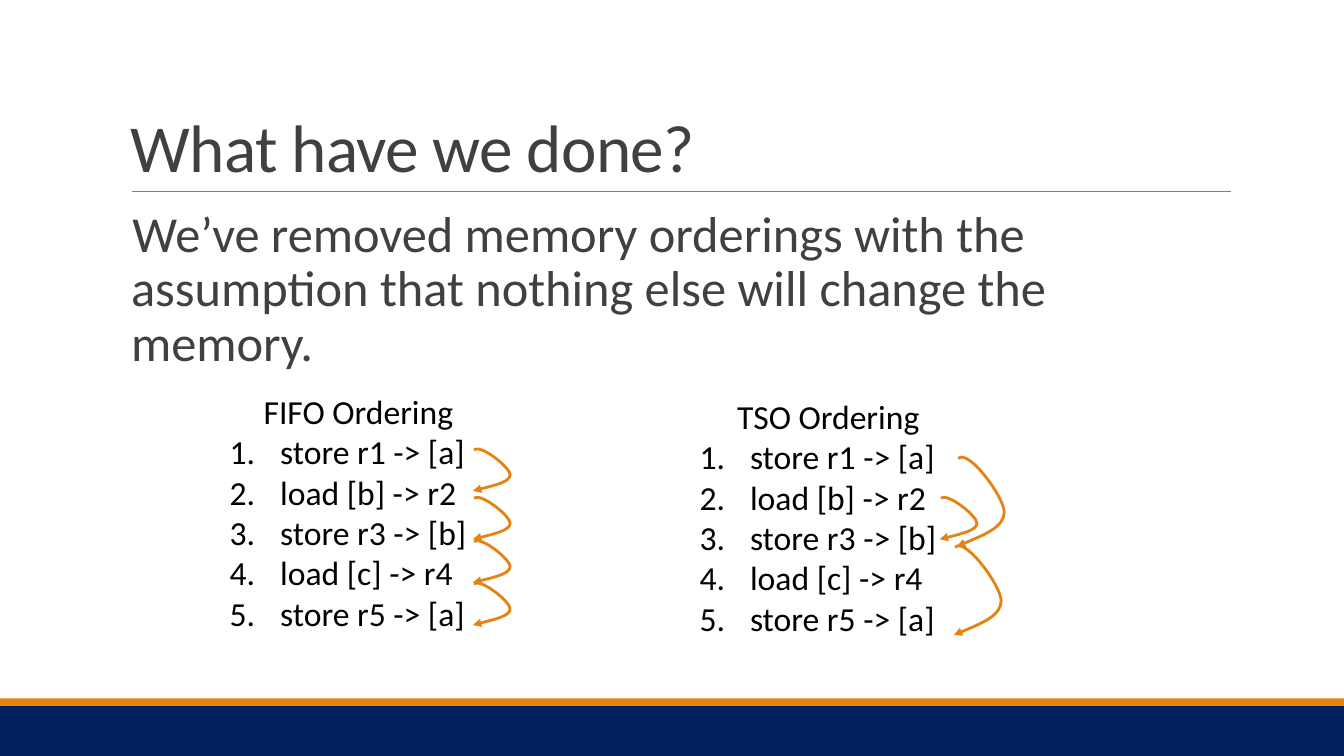
import pptx
import pptx.dml.color
import pptx.enum.shapes
import pptx.enum.text
import pptx.oxml
import pptx.oxml.ns
import pptx.util

PX = 9144  # 100 px to the inch

THEME = {
    "font": "Calibri",
    "navy": "002060", "orange": "E48312", "rule": "808080",
    "grey": "404040", "black": "000000",
    "title": 48, "body": 36, "list": 24,
    "thin": 0.5, "thick": 2,
}
# A bent arrow in fractions of its box: its tip, then two cubic curves.
TIP = (0, 1)
BEND = [
    [(0.49, 0.89), (1, 0.78), (1, 0.61)],
    [(1, 0.44), (0.24, -0.12), (0.03, 0)],
]
SMALL, LARGE = (37, 41), (47, 87)
CODE = ["store r1 -> [a]", "load [b] -> r2", "store r3 -> [b]",
        "load [c] -> r4", "store r5 -> [a]"]


def color(name):
    return pptx.dml.color.RGBColor.from_string(THEME[name])


def emu(*vals):
    return [round(val * PX) for val in vals]


def add_xml(parent, tag, **attrs):
    node = pptx.oxml.parse_xml(f"<{tag} {pptx.oxml.ns.nsdecls('a')}/>")
    for key, val in attrs.items():
        node.set(key, val)
    parent.append(node)
    return node


def set_all(item, values):
    for key, val in values.items():
        setattr(item, key, val)


def add_box(slide, box, **frame):
    text = slide.shapes.add_textbox(*emu(*box)).text_frame
    set_all(text, {"word_wrap": True, **frame})
    return text


def add_run(para, words, size, tint):
    run = para.add_run()
    run.text = words
    set_all(run.font, {"name": THEME["font"], "size": pptx.util.Pt(THEME[size])})
    run.font.color.rgb = color(tint)
    return run


def hang(para, depth):
    """Indent a paragraph by depth, with its bullet at the left edge."""
    props = para._p.get_or_add_pPr()
    props.set("marL", str(depth * PX))
    props.set("indent", str(-depth * PX))
    return props


def draw_base(slide, box):
    """Draw the navy band with its orange stripe on top."""
    left, top, width, height = box
    stripe = 7
    for tint, y, tall in [("navy", top + stripe, height - stripe),
                          ("orange", top, stripe)]:
        bar = slide.shapes.add_shape(
            pptx.enum.shapes.MSO_SHAPE.RECTANGLE, *emu(left, y, width, tall))
        bar.shadow.inherit = False
        bar.fill.solid()
        bar.fill.fore_color.rgb = color(tint)
        bar.line.fill.background()


def draw_title(slide, box, words):
    left, top, width, height = box
    base = top + height
    rule = slide.shapes.add_connector(
        pptx.enum.shapes.MSO_CONNECTOR.STRAIGHT,
        *emu(left + 11, base, left + width + 1, base))
    rule.line.color.rgb = color("rule")
    rule.line.width = pptx.util.Pt(THEME["thin"])
    add_xml(rule._element.spPr, "a:effectLst")
    text = add_box(slide, box,
                   vertical_anchor=pptx.enum.text.MSO_ANCHOR.BOTTOM)
    para = text.paragraphs[0]
    para.line_spacing = 0.85
    run = add_run(para, words, "title", "grey")
    run.font._element.set("spc", "-50")


def draw_body(slide, box, words):
    text = add_box(slide, box, margin_left=0, margin_right=0)
    para = text.paragraphs[0]
    props = hang(para, 10)
    tint = add_xml(props, "a:buClr")
    add_xml(tint, "a:srgbClr", val=THEME["orange"])
    add_xml(props, "a:buFont", typeface=THEME["font"])
    add_xml(props, "a:buChar", char=" ")
    set_all(para, {"line_spacing": 0.9, "space_after": pptx.util.Pt(2)})
    add_run(para, words, "body", "grey")


def draw_arrow(slide, box):
    """Draw a bent arrow down the right side, its head at the lower left."""
    left, top, width, height = box

    def place(dot, x=0, y=0):
        return emu(x + dot[0] * width, y + dot[1] * height)

    pen = slide.shapes.build_freeform(*place(TIP, left, top), scale=1)
    pen.add_line_segments([place(part[-1], left, top) for part in BEND],
                          close=False)
    curve = pen.convert_to_shape()
    for side, part in zip(curve._element.xpath(".//a:lnTo"), BEND):
        bend = add_xml(side.getparent(), "a:cubicBezTo")
        for dot in part:
            x, y = place(dot)
            add_xml(bend, "a:pt", x=str(x), y=str(y))
        side.getparent().replace(side, bend)
    curve.shadow.inherit = False
    curve.fill.background()
    curve.line.color.rgb = color("orange")
    curve.line.width = pptx.util.Pt(THEME["thick"])
    add_xml(curve.line._get_or_add_ln(), "a:headEnd", type="triangle")


def draw_order(slide, box, name, arrows):
    """Draw a headed code list and its arrows, placed from the box corner."""
    left, top = box[:2]
    text = add_box(slide, box)
    head = text.paragraphs[0]
    head.alignment = pptx.enum.text.PP_ALIGN.CENTER
    add_run(head, name, "list", "black")
    for line in CODE:
        para = text.add_paragraph()
        props = hang(para, 50)
        add_xml(props, "a:buFont", typeface=THEME["font"])
        add_xml(props, "a:buAutoNum", type="arabicPeriod")
        add_run(para, line, "list", "black")
    for x, y, size in arrows:
        draw_arrow(slide, (left + x, top + y, *size))


def main():
    deck = pptx.Presentation()
    wide, tall = 1333, 750
    set_all(deck, {"slide_width": wide * PX, "slide_height": tall * PX})
    slide = deck.slides.add_slide(deck.slide_layouts[6])
    draw_base(slide, (0, 693, wide, 57))
    draw_title(slide, (120, 31, 1100, 159), "What have we done?")
    draw_body(slide, (120, 202, 1100, 181),
              "We’ve removed memory orderings with the assumption "
              "that nothing else will change the memory.")
    draw_order(slide, (218, 383, 275, 252), "FIFO Ordering",
               [(251, y, SMALL) for y in (63, 111, 154, 196)])
    draw_order(slide, (684, 388, 275, 252), "TSO Ordering",
               [(248, 106, SMALL), (265, 67, LARGE), (262, 155, LARGE)])
    deck.save("out.pptx")


if __name__ == "__main__":
    main()
